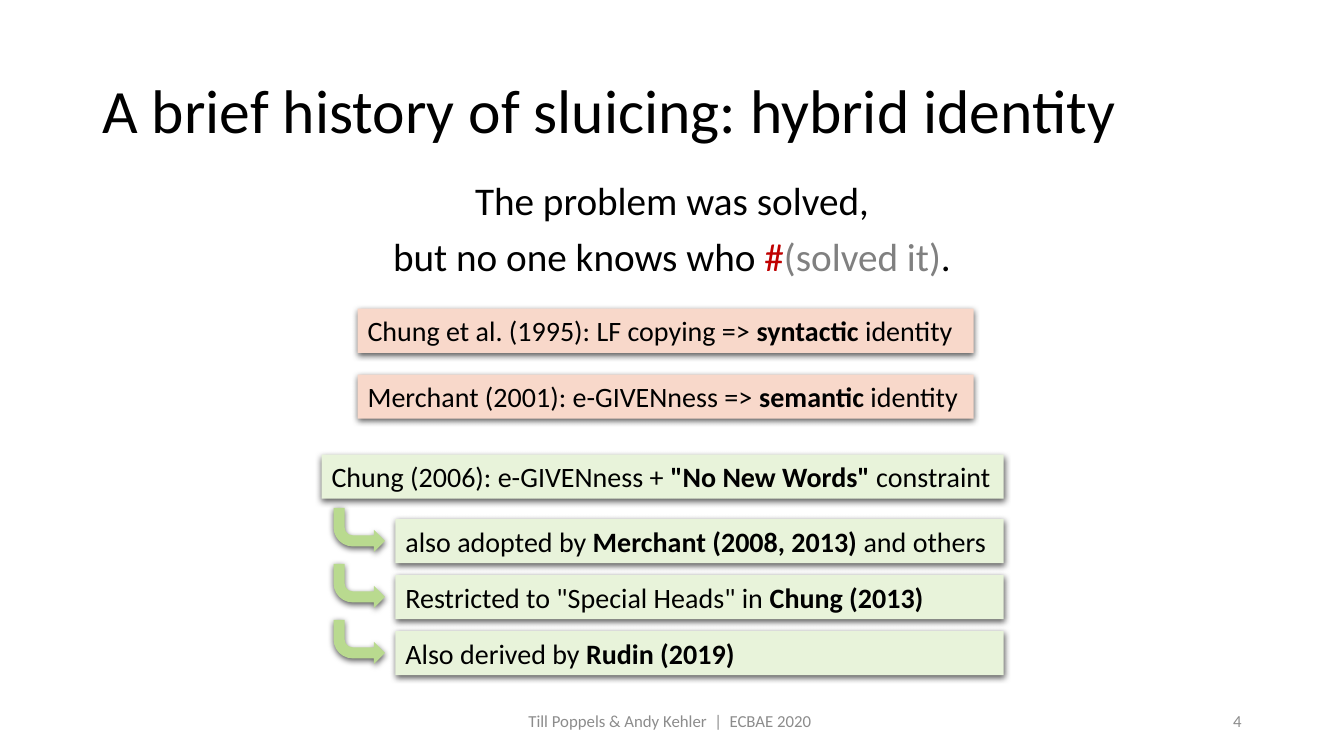
from dataclasses import dataclass

from lxml import etree
from pptx import Presentation
from pptx.dml.color import RGBColor
from pptx.enum.shapes import MSO_SHAPE
from pptx.enum.text import MSO_ANCHOR, PP_ALIGN
from pptx.oxml import parse_xml
from pptx.util import Pt

RECTANGLE, BENT_ARROW = MSO_SHAPE.RECTANGLE, MSO_SHAPE.BENT_ARROW
TOP, MIDDLE = MSO_ANCHOR.TOP, MSO_ANCHOR.MIDDLE
LEFT, CENTER, RIGHT = PP_ALIGN.LEFT, PP_ALIGN.CENTER, PP_ALIGN.RIGHT
TITLE_ONLY = 5


@dataclass(frozen=True)
class Theme:
    font: str = "Calibri"
    ink: str = "000000"
    muted: str = "808080"
    footer: str = "8C8C8C"
    marker: str = "C00000"
    identity_fill: str = "F8D8CA"
    hybrid_fill: str = "E8F3DA"
    arrow_fill: str = "B9DA8F"
    title_size: float = 44
    example_size: float = 28
    claim_size: float = 20
    footer_size: float = 12


THEME = Theme()
CLAIM_HEIGHT = 31.5

SHADOW = """<a:effectLst xmlns:a="http://schemas.openxmlformats.org/drawingml/2006/main">
<a:outerShdw blurRad="57150" dist="19050" dir="5400000" algn="ctr" rotWithShape="0">
<a:srgbClr val="000000"><a:alpha val="63000"/></a:srgbClr></a:outerShdw></a:effectLst>"""

IDENTITY_CLAIMS = [
    [("Chung et al. (1995): LF copying => ", False), ("syntactic ", True), ("identity", False)],
    [("Merchant (2001): e-GIVENness => ", False), ("semantic", True), (" identity", False)],
]
HYBRID_CLAIM = [("Chung (2006): e-GIVENness + ", False), ('"No New Words" ', True),
                ("constraint", False)]
FOLLOW_UPS = [
    [("also adopted by ", False), ("Merchant (2008, 2013)", True), (" and others", False)],
    [('Restricted to "Special Heads" in ', False), ("Chung (2013)", True)],
    [("Also derived by ", False), ("Rudin (2019)", True)],
]
EXAMPLE = [
    [("The problem was solved,", THEME.ink)],
    [("but no one knows who ", THEME.ink), ("#", THEME.marker),
     ("(solved it)", THEME.muted), (".", THEME.ink)],
]


def add_run(paragraph, words, size, color=THEME.ink, bold=False):
    run = paragraph.add_run()
    run.text = words
    run.font.name = THEME.font
    run.font.size = Pt(size)
    run.font.bold = bold
    run.font.color.rgb = RGBColor.from_string(color)


def add_text_frame(slide, box, anchor):
    frame = slide.shapes.add_textbox(*map(Pt, box)).text_frame
    frame.word_wrap = True
    frame.vertical_anchor = anchor
    return frame


def add_shadowed_shape(slide, preset, box, fill):
    shape = slide.shapes.add_shape(preset, *map(Pt, box))
    shape.fill.solid()
    shape.fill.fore_color.rgb = RGBColor.from_string(fill)
    shape.line.fill.background()
    shape.shadow.inherit = False
    properties = shape._element.spPr
    properties.remove(properties.find("{*}effectLst"))
    properties.append(parse_xml(etree.tostring(etree.fromstring(SHADOW))))
    return shape


def add_title(slide, box, words):
    title = slide.shapes.title
    title.left, title.top, title.width, title.height = map(Pt, box)
    title.text_frame.vertical_anchor = MIDDLE
    title.text_frame.word_wrap = True
    paragraph = title.text_frame.paragraphs[0]
    paragraph.alignment = LEFT
    paragraph.line_spacing = 0.9
    add_run(paragraph, words, THEME.title_size)


def add_example(slide, box):
    frame = add_text_frame(slide, box, TOP)
    for index, line in enumerate(EXAMPLE):
        paragraph = frame.add_paragraph() if index else frame.paragraphs[0]
        paragraph.alignment = CENTER
        paragraph.line_spacing = 0.9
        paragraph.space_before = Pt(10)
        for words, color in line:
            add_run(paragraph, words, THEME.example_size, color)


def add_claim(slide, left, top, width, fill, claim):
    box = (left, top, width, CLAIM_HEIGHT)
    frame = add_shadowed_shape(slide, RECTANGLE, box, fill).text_frame
    frame.word_wrap = True
    frame.vertical_anchor = TOP
    paragraph = frame.paragraphs[0]
    paragraph.alignment = LEFT
    for words, bold in claim:
        add_run(paragraph, words, THEME.claim_size, bold=bold)


def add_identity_claims(slide, left, top, width, pitch):
    for index, claim in enumerate(IDENTITY_CLAIMS):
        add_claim(slide, left, top + index * pitch, width, THEME.identity_fill, claim)


def add_hybrid_claims(slide, left, top, width, pitch):
    """Places the main claim and, indented below it, its follow-ups with arrows."""
    add_claim(slide, left, top, width, THEME.hybrid_fill, HYBRID_CLAIM)
    indent, first_drop = 52.75, 46
    for index, follow_up in enumerate(FOLLOW_UPS):
        row_top = top + first_drop + index * pitch
        add_claim(slide, left + indent, row_top, width - indent, THEME.hybrid_fill, follow_up)
        arrow_box = (left + 8.5, row_top - 8, 36.75, CLAIM_HEIGHT)
        arrow = add_shadowed_shape(slide, BENT_ARROW, arrow_box, THEME.arrow_fill)
        arrow._element.spPr.get_or_add_xfrm().set("flipV", "1")


def add_footer_text(slide, box, alignment, words):
    paragraph = add_text_frame(slide, box, MIDDLE).paragraphs[0]
    paragraph.alignment = alignment
    add_run(paragraph, words, THEME.footer_size, THEME.footer)


def add_history_slide(deck):
    slide = deck.slides.add_slide(deck.slide_layouts[TITLE_ONLY])
    add_title(slide, (66, 28.75, 828, 104.5), "A brief history of sluicing: hybrid identity")
    add_example(slide, (66, 126, 828, 93.5))
    add_identity_claims(slide, left=255.5, top=220.5, width=440, pitch=47)
    add_hybrid_claims(slide, left=229.75, top=324.75, width=487.25, pitch=40)
    add_footer_text(slide, (318, 500.5, 324, 28.75), CENTER,
                    "Till Poppels & Andy Kehler  |  ECBAE 2020 ")
    add_footer_text(slide, (678, 500.5, 216, 28.75), RIGHT, "4")


def main():
    deck = Presentation()
    deck.slide_width, deck.slide_height = Pt(960), Pt(540)
    add_history_slide(deck)
    deck.save("out.pptx")


if __name__ == "__main__":
    main()
